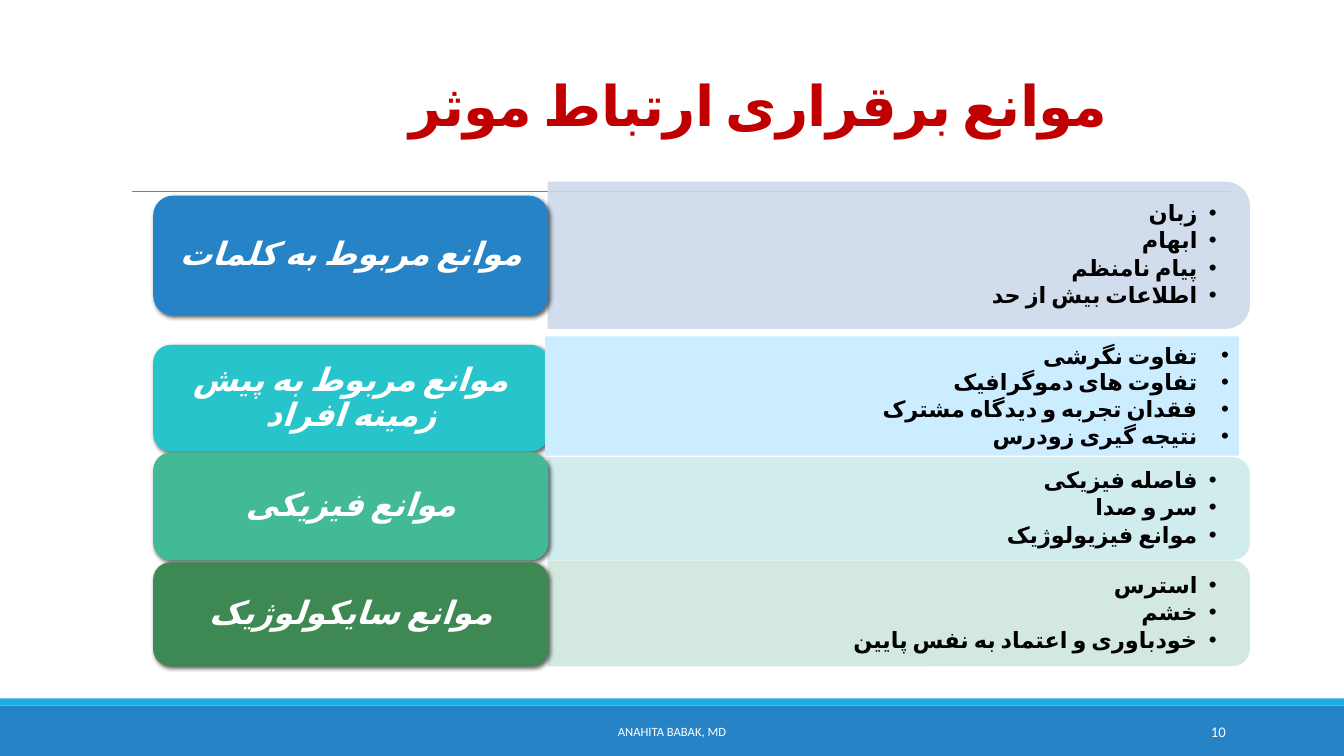
import pptx
import pptx.util
import pptx.dml.color
import pptx.oxml
import pptx.oxml.ns
import pptx.enum.lang
import pptx.enum.shapes
import pptx.enum.text

Cm = pptx.util.Cm
Pt = pptx.util.Pt
KIND = pptx.enum.shapes.MSO_SHAPE
ALIGN = pptx.enum.text.PP_ALIGN
ANCHOR = pptx.enum.text.MSO_ANCHOR
NS = 'xmlns:a="http://schemas.openxmlformats.org/drawingml/2006/main"'
WIDE, HIGH = 33.87, 19.05

# Label, items, card (colour, top, height), panel (colour, top, height)
ROWS = [
    ("موانع مربوط به کلمات",
     ["زبان", "ابهام", "پیام نامنظم", "اطلاعات بیش از حد"],
     ("2683C6", 4.93, 3.02), ("CDD9EA", 4.58, 3.71)),
    ("موانع مربوط به پیش زمینه افراد",
     ["تفاوت نگرشی", "تفاوت های دموگرافیک",
      "فقدان تجربه و دیدگاه مشترک", "نتیجه گیری زودرس"],
     ("28C4CC", 8.69, 2.69), ("CCECFF", 8.48, 3)),
    ("موانع فیزیکی",
     ["فاصله فیزیکی", "سر و صدا", "موانع فیزیولوژیک"],
     ("42BA97", 11.4, 2.72), ("CDEAEC", 11.52, 2.59)),
    ("موانع سایکولوژیک",
     ["استرس", "خشم", "خودباوری و اعتماد به نفس پایین"],
     ("3E8853", 14.17, 2.62), ("CFE7DD", 14.12, 2.67)),
]


def paint(fill, color):
    fill.solid()
    fill.fore_color.rgb = pptx.dml.color.RGBColor.from_string(color)


def add_xml(parent, xml):
    parent.append(pptx.oxml.parse_xml(xml))


def add_box(slide, kind, x, y, w, h, color):
    box = slide.shapes.add_shape(kind, Cm(x), Cm(y), Cm(w), Cm(h))
    box.shadow.inherit = False
    paint(box.fill, color)
    box.line.fill.background()
    return box


def set_frame(shape, anchor, side=0.25, edge=0.13):
    frame = shape.text_frame
    frame.word_wrap = True
    frame.vertical_anchor = anchor
    frame.margin_left = frame.margin_right = Cm(side)
    frame.margin_top = frame.margin_bottom = Cm(edge)
    return frame


def add_text(slide, x, y, w, h, anchor=ANCHOR.MIDDLE, side=0.25, edge=0.13):
    box = slide.shapes.add_textbox(Cm(x), Cm(y), Cm(w), Cm(h))
    return set_frame(box, anchor, side, edge)


def write(para, text, size, color, align):
    para.alignment = align
    run = para.add_run()
    run.text = text
    run.font.name, run.font.size = "Calibri", Pt(size)
    paint(run.font.fill, color)
    return run


def write_fa(para, text, size, color, align, rtl=True):
    """Add bold Persian text."""
    run = write(para, text, size, color, align)
    run.font.bold = True
    props = run._r.get_or_add_rPr()
    props.set("lang", "fa-IR")
    add_xml(props, f'<a:cs {NS} typeface="Calibri"/>')
    if rtl:
        para._p.get_or_add_pPr().set("rtl", "1")
    return run


def add_list(frame, items, indent, space=None, after=None):
    for i, item in enumerate(items):
        para = frame.paragraphs[0] if i == 0 else frame.add_paragraph()
        write_fa(para, item, 16, "000000", ALIGN.RIGHT)
        para.line_spacing = space
        para.space_after = after
        props = para._p.get_or_add_pPr()
        props.set("marL", str(Cm(indent)))
        props.set("indent", str(-Cm(indent)))
        add_xml(props, f'<a:buFont {NS} typeface="Arial"/>')
        add_xml(props, f'<a:buChar {NS} char="•"/>')


def add_card(slide, x, y, w, h, color, label):
    card = add_box(slide, KIND.ROUNDED_RECTANGLE, x, y, w, h, color)
    effects = card._element.spPr.find(pptx.oxml.ns.qn("a:effectLst"))
    add_xml(effects, f'<a:outerShdw {NS} blurRad="{Pt(3)}" dist="{Pt(2)}" dir="2700000" '
                     'algn="br" rotWithShape="0"><a:srgbClr val="000000">'
                     '<a:alpha val="60000"/></a:srgbClr></a:outerShdw>')
    para = set_frame(card, ANCHOR.MIDDLE).paragraphs[0]
    run = write_fa(para, label, 23, "FFFFFF", ALIGN.CENTER, rtl=False)
    run.font.italic = True
    para.line_spacing = 0.9


def add_panel(slide, x, y, w, h, color, items):
    # A quarter turn puts the two round corners on the right
    panel = add_box(slide, KIND.ROUND_2_SAME_RECTANGLE,
                    x + (w - h) / 2, y + (h - w) / 2, h, w, color)
    panel.rotation = 90
    tint = panel._element.spPr.find(".//" + pptx.oxml.ns.qn("a:srgbClr"))
    add_xml(tint, f'<a:alpha {NS} val="90000"/>')
    frame = add_text(slide, x, y + 0.15, w - 0.15, h - 0.3, side=0.69, edge=0.36)
    add_list(frame, items, 0.48, 0.9, Pt(2.4))


def add_plain(slide, x, y, w, h, color, items):
    box = add_box(slide, KIND.RECTANGLE, x, y, w, h, color)
    add_list(set_frame(box, ANCHOR.TOP), items, 0.79)


def add_head(slide, x, y, w, h):
    rule = slide.shapes.add_connector(pptx.enum.shapes.MSO_CONNECTOR.STRAIGHT,
                                      Cm(x - 3.4), Cm(y + 3.92),
                                      Cm(x + w - 0.49), Cm(y + 3.92))
    paint(rule.line.fill, "808080")
    rule.line.width = Pt(0.5)
    add_xml(rule._element.spPr, f"<a:effectLst {NS}/>")
    para = add_text(slide, x, y, w, h, ANCHOR.BOTTOM).paragraphs[0]
    run = write_fa(para, "موانع برقراری ارتباط موثر", 40, "C00000", ALIGN.CENTER)
    run._r.get_or_add_rPr().set("spc", "-50")
    para.line_spacing = 0.85


def add_foot(slide, x, y, w, h):
    add_box(slide, KIND.RECTANGLE, x, y + 0.18, w, h - 0.18, "2683C6")
    add_box(slide, KIND.RECTANGLE, x, y, w, 0.18, "1CADE4")
    name = add_text(slide, x + 10.24, y + 0.33, 13.39, 1.02).paragraphs[0]
    write(name, "ANAHITA BABAK, MD", 9, "FFFFFF", ALIGN.CENTER)
    page = add_text(slide, x + 27.51, y + 0.33, 3.63, 1.02).paragraphs[0]
    write(page, "10", 10.5, "FFFFFF", ALIGN.RIGHT)


def main():
    deck = pptx.Presentation()
    deck.slide_width, deck.slide_height = Cm(WIDE), Cm(HIGH)
    slide = deck.slides.add_slide(deck.slide_layouts[6])

    add_foot(slide, 0, 17.6, WIDE, HIGH - 17.6)
    add_head(slide, 6.73, 0.91, 24.77, 2.69)

    # The second row has a square panel that lies over its card
    for i, (label, items, (dark, top, tall), (pale, y, h)) in enumerate(ROWS):
        card = (slide, 3.86, top, 9.96, tall, dark, label)
        if i == 1:
            add_card(*card)
            add_plain(slide, 13.74, y, 17.48, h, pale, items)
        else:
            add_panel(slide, 13.8, y, 17.7, h, pale, items)
            add_card(*card)

    deck.save("out.pptx")


if __name__ == "__main__":
    main()
